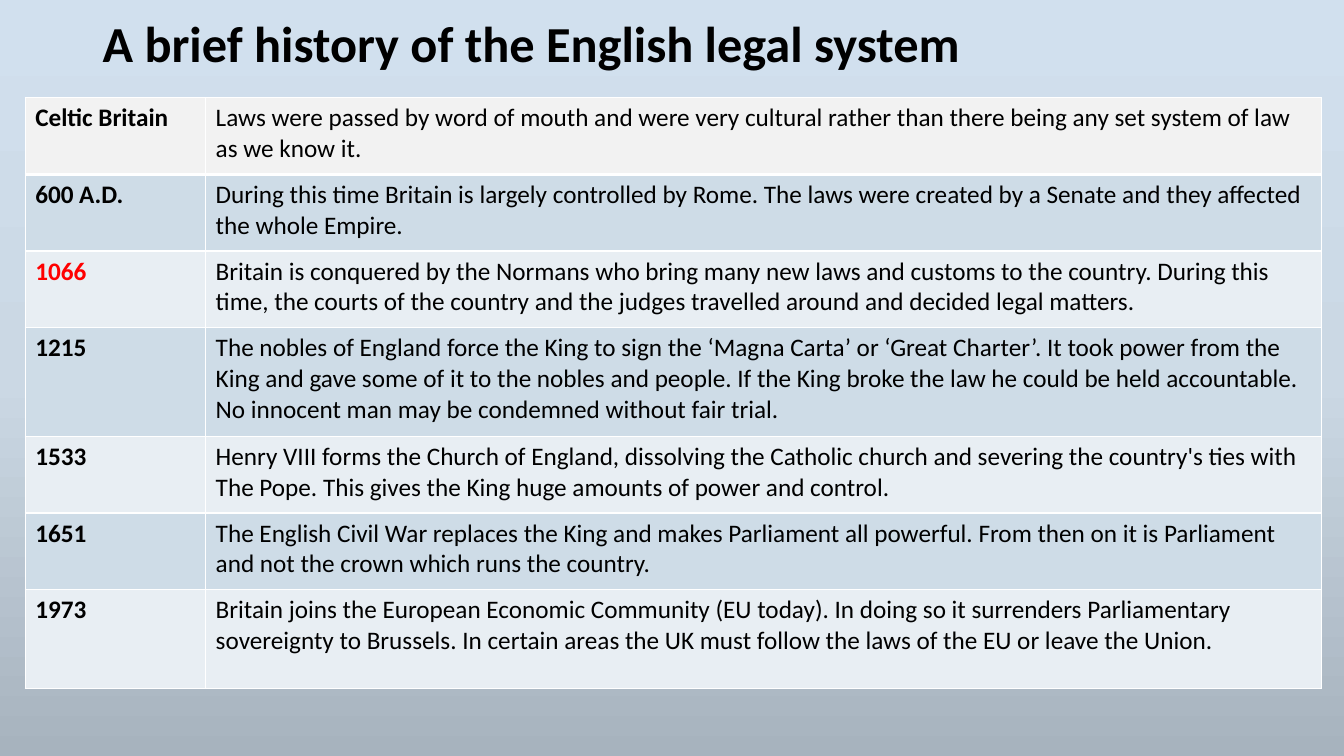
from copy import deepcopy

from lxml import etree
from pptx import Presentation
from pptx import util as u
from pptx.dml.color import RGBColor
from pptx.enum import text
from pptx.oxml.ns import qn

TITLE = "A brief history of the English legal system"
BACKGROUND = [(0, "D1E0EE"), (0.5, "CBD8E4"), (1, "A7B3BE")]
HEADER_FILL = "F2F2F2"
BAND_FILLS = ["E8EEF3", "CEDCE7"]
COLUMN_WIDTHS = [1.79, 11.07]
HIGHLIGHTED = "1066"
# Period, row height in inches, what happened
HISTORY = [
    ("Celtic Britain", 0.76,
     "Laws were passed by word of mouth and were very cultural rather than "
     "there being any set system of law as we know it."),
    ("600 A.D.", 0.76,
     "During this time Britain is largely controlled by Rome. The laws were "
     "created by a Senate and they affected the whole Empire."),
    ("1066", 0.76,
     "Britain is conquered by the Normans who bring many new laws and customs "
     "to the country. During this time, the courts of the country and the "
     "judges travelled around and decided legal matters."),
    ("1215", 1.08,
     "The nobles of England force the King to sign the ‘Magna Carta’ or "
     "‘Great Charter’. It took power from the King and gave some of it to the "
     "nobles and people. If the King broke the law he could be held "
     "accountable. No innocent man may be condemned without fair trial."),
    ("1533", 0.76,
     "Henry VIII forms the Church of England, dissolving the Catholic church "
     "and severing the country's ties with The Pope. This gives the King huge "
     "amounts of power and control."),
    ("1651", 0.76,
     "The English Civil War replaces the King and makes Parliament all "
     "powerful. From then on it is Parliament and not the crown which runs "
     "the country."),
    ("1973", 0.98,
     "Britain joins the European Economic Community (EU today). In doing so it "
     "surrenders Parliamentary sovereignty to Brussels. In certain areas the "
     "UK must follow the laws of the EU or leave the Union."),
]


def rgb(hex_color):
    return RGBColor.from_string(hex_color)


def write(paragraph, words, color="000000", **font_format):
    run = paragraph.add_run()
    run.text = words
    run.font.color.rgb = rgb(color)
    for name, value in {"name": "Calibri", **font_format}.items():
        setattr(run.font, name, value)


def paint_background(slide):
    fill = slide.background.fill
    fill.gradient()
    fill.gradient_angle = 270
    stop_list = next(slide.element.iter(qn("a:gsLst")))
    stop_list.append(deepcopy(stop_list[-1]))
    for stop, (position, color) in zip(fill.gradient_stops, BACKGROUND):
        stop.position = position
        stop.color.rgb = rgb(color)


def add_title(slide):
    frame = slide.shapes.add_textbox(
        u.Inches(0.92), u.Inches(0.11), u.Inches(11.5), u.Inches(1.3)).text_frame
    frame.word_wrap = True
    frame.vertical_anchor = text.MSO_ANCHOR.MIDDLE
    heading = frame.paragraphs[0]
    heading.line_spacing = 0.9
    write(heading, TITLE, size=u.Pt(36), bold=True)
    heading.add_line_break()
    heading.font.size = u.Pt(36)


def add_borders(cell, widths):
    """Draw white cell edges; widths maps an edge letter (L, R, T, B) to points."""
    properties = cell._tc.get_or_add_tcPr()
    for edge, width in widths.items():
        line = etree.SubElement(properties, qn(f"a:ln{edge}"), w=str(u.Pt(width)))
        solid = etree.SubElement(line, qn("a:solidFill"))
        etree.SubElement(solid, qn("a:srgbClr"), val="FFFFFF")


def fill_cell(cell, words, row, **font_format):
    is_header = row == 0
    add_borders(cell, {"L": 1, "R": 1, "T": 3 if row == 1 else 1,
                       "B": 3 if is_header else 1})
    cell.fill.solid()
    cell.fill.fore_color.rgb = rgb(HEADER_FILL if is_header else BAND_FILLS[row % 2])
    write(cell.text_frame.paragraphs[0], words, size=u.Pt(18), **font_format)


def add_timeline(slide):
    heights = [height for _, height, _ in HISTORY]
    timeline = slide.shapes.add_table(
        len(HISTORY), len(COLUMN_WIDTHS), u.Inches(0.25), u.Inches(0.97),
        u.Inches(sum(COLUMN_WIDTHS)), u.Inches(sum(heights))).table
    for column, width in zip(timeline.columns, COLUMN_WIDTHS):
        column.width = u.Inches(width)
    for row, (period, height, event) in enumerate(HISTORY):
        timeline.rows[row].height = u.Inches(height)
        period_color = "FF0000" if period == HIGHLIGHTED else "000000"
        # The second band is the darker one, so odd rows take it
        fill_cell(timeline.cell(row, 0), period, row, color=period_color, bold=True)
        fill_cell(timeline.cell(row, 1), event, row, bold=False)


def main():
    deck = Presentation()
    deck.slide_width, deck.slide_height = u.Inches(13.33), u.Inches(7.5)
    slide = deck.slides.add_slide(deck.slide_layouts[6])
    paint_background(slide)
    add_title(slide)
    add_timeline(slide)
    deck.save("out.pptx")


if __name__ == "__main__":
    main()
